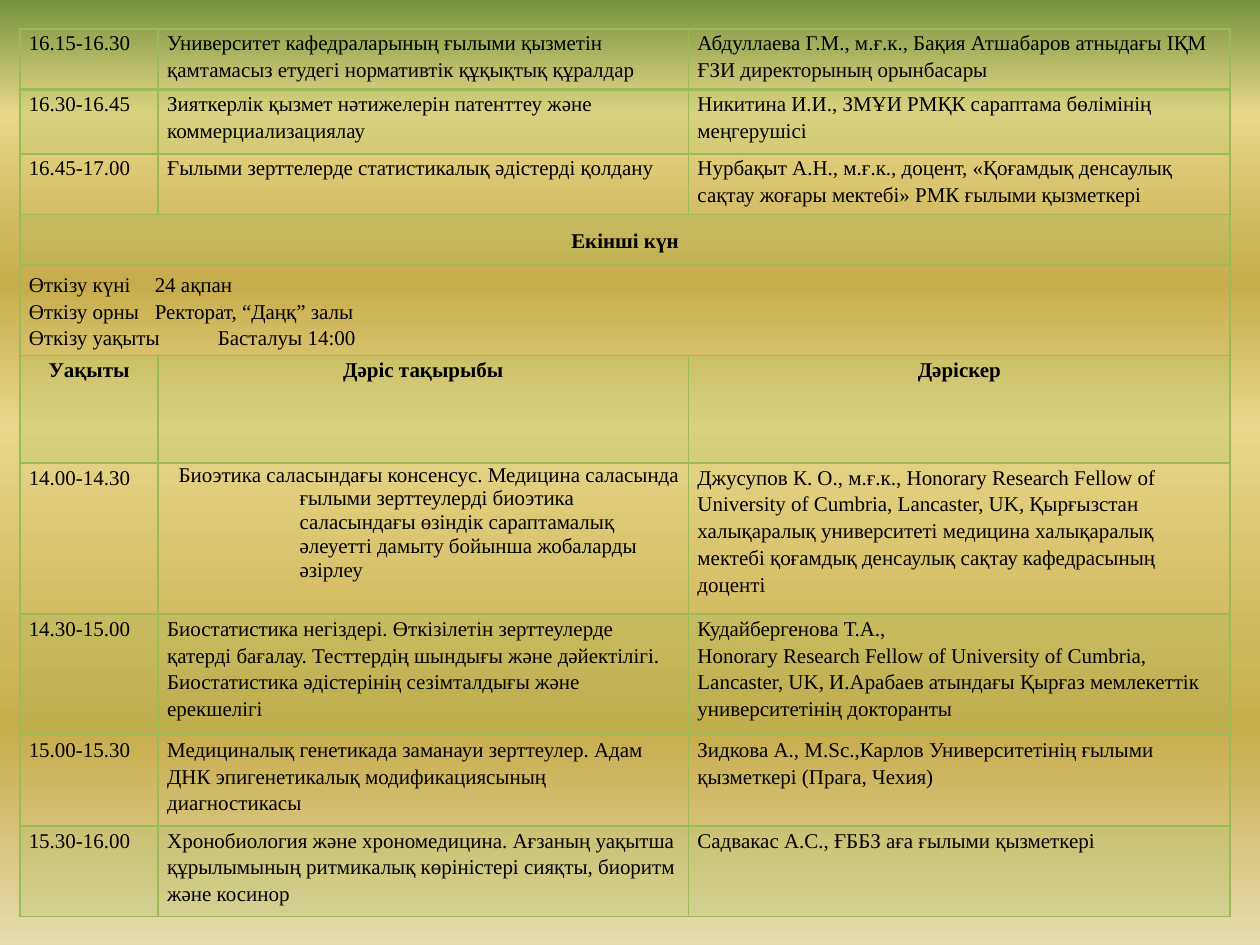
from lxml import etree
from pptx import Presentation
from pptx.dml.color import RGBColor
from pptx.enum import text
from pptx.oxml.ns import qn
from pptx.util import Cm, Pt

BLACK = RGBColor(0x00, 0x00, 0x00)
GREEN = RGBColor(0x9B, 0xBB, 0x59)
FONT = "Times New Roman"
BACKGROUND = [
    (0, RGBColor(0x77, 0x93, 0x3C)),
    (12, RGBColor(0xE6, 0xD7, 0x8A)),
    (30, RGBColor(0xC7, 0xAC, 0x4C)),
    (45, RGBColor(0xE6, 0xD7, 0x8A)),
    (77, RGBColor(0xC7, 0xAC, 0x4C)),
    (100, RGBColor(0xE6, 0xDC, 0xAC)),
]

COLUMNS = [2.79, 10.69, 10.92]
HEADING = dict(bold=True, align=text.PP_ALIGN.CENTER)
HANGING = dict(left=2.67, first=-2.44, spacing=Pt(13.6), tabs=[0.23, 1.24])
MIDDLE = text.MSO_ANCHOR.MIDDLE

ROWS = [
    (1.22, {}, [
        "16.15-16.30",
        "Университет кафедраларының ғылыми қызметін қамтамасыз етудегі нормативтік құқықтық құралдар",
        "Абдуллаева Г.М., м.ғ.к., Бақия Атшабаров атныдағы ІҚМ ҒЗИ директорының орынбасары"]),
    (1.3, {}, [
        "16.30-16.45",
        "Зияткерлік қызмет нәтижелерін патенттеу және\nкоммерциализациялау",
        "Никитина И.И., ЗМҰИ РМҚК сараптама бөлімінің меңгерушісі"]),
    (1.22, {}, [
        "16.45-17.00",
        "Ғылыми зерттелерде статистикалық әдістерді қолдану",
        "Нурбақыт А.Н., м.ғ.к., доцент, «Қоғамдық денсаулық сақтау жоғары мектебі» РМК ғылыми қызметкері"]),
    (1.02, HEADING, ["Екінші күн"]),
    (1.83, dict(line_tabs=[21.6, 19.66, 20.07]), [
        "Өткізу күні\t24 ақпан\nӨткізу орны\tРекторат, “Даңқ” залы\nӨткізу уақыты\tБасталуы 14:00"]),
    (2.16, HEADING, ["Уақыты", "Дәріс тақырыбы", "Дәріскер"]),
    (3.05, {}, [
        "14.00-14.30",
        ("Биоэтика саласындағы консенсус. Медицина саласында ғылыми зерттеулерді биоэтика "
         "саласындағы өзіндік сараптамалық әлеуетті дамыту бойынша жобаларды әзірлеу", HANGING),
        "Джусупов К. О., м.ғ.к., Honorary Research Fellow of University of Cumbria, Lancaster, UK, "
        "Қырғызстан халықаралық университеті медицина халықаралық мектебі қоғамдық денсаулық "
        "сақтау кафедрасының доценті"]),
    (2.44, {}, [
        "14.30-15.00",
        "Биостатистика негіздері. Өткізілетін зерттеулерде қатерді бағалау. Тесттердің шындығы "
        "және дәйектілігі. Биостатистика әдістерінің сезімталдығы және ерекшелігі",
        "Кудайбергенова Т.А.,\nHonorary Research Fellow of University of Cumbria, Lancaster, UK, "
        "И.Арабаев атындағы Қырғаз мемлекеттік университетінің докторанты"]),
    (1.83, {}, [
        "15.00-15.30",
        "Медициналық генетикада заманауи зерттеулер. Адам ДНК эпигенетикалық модификациясының диагностикасы",
        "Зидкова А., M.Sc.,Карлов Университетінің ғылыми қызметкері (Прага, Чехия)"]),
    (1.83, {}, [
        "15.30-16.00",
        "Хронобиология және хрономедицина. Ағзаның уақытша құрылымының ритмикалық көріністері "
        "сияқты, биоритм және косинор",
        "Садвакас А.С., ҒББЗ аға ғылыми қызметкері"]),
]


def add(parent, tag, **attrs):
    return etree.SubElement(parent, qn(tag), {k: str(v) for k, v in attrs.items()})


def write(tf, content, bold=False, align=text.PP_ALIGN.LEFT, spacing=1.15,
          left=0, first=0, tabs=(), line_tabs=()):
    tf.word_wrap = True
    for i, line in enumerate(content.split("\n")):
        p = tf.paragraphs[0] if i == 0 else tf.add_paragraph()
        p.alignment = align
        p.line_spacing = spacing
        pPr = p._p.get_or_add_pPr()
        pPr.set("marL", str(Cm(left)))
        pPr.set("indent", str(Cm(first)))
        stops = [line_tabs[i]] if line_tabs else tabs
        if stops:
            tab_list = add(pPr, "a:tabLst")
            for stop in stops:
                add(tab_list, "a:tab", pos=Cm(stop), algn="l")
        r = p.add_run()
        r.text = line
        r.font.name = FONT
        r.font.size = Pt(12)
        r.font.bold = bold
        r.font.color.rgb = BLACK


def paint_background(s):
    s.background.fill.gradient()
    grad = s._element.find(".//" + qn("a:gradFill"))
    for child in list(grad):
        grad.remove(child)
    stops = add(grad, "a:gsLst")
    for position, color in BACKGROUND:
        add(add(stops, "a:gs", pos=position * 1000), "a:srgbClr", val=color)
    add(grad, "a:lin", ang=90 * 60000, scaled=0)


def style_cell(cell, shaded, bottom):
    cell.margin_left = cell.margin_right = Cm(0.18)
    cell.margin_top = cell.margin_bottom = 0
    tcPr = cell._tc.get_or_add_tcPr()
    for side, width in (("L", 1), ("R", 1), ("T", 1), ("B", bottom)):
        ln = add(tcPr, "a:ln" + side, w=Pt(width))
        add(add(ln, "a:solidFill"), "a:srgbClr", val=GREEN)
    if shaded:
        cell.fill.solid()
        cell.fill.fore_color.rgb = GREEN
        add(tcPr.find(qn("a:solidFill")).find(qn("a:srgbClr")), "a:alpha", val=20000)
    else:
        cell.fill.background()


def main():
    prs = Presentation()
    prs.slide_width, prs.slide_height = Cm(25.4), Cm(19.05)
    s = prs.slides.add_slide(prs.slide_layouts[6])
    paint_background(s)

    heights = [row[0] for row in ROWS]
    table = s.shapes.add_table(len(ROWS), len(COLUMNS), Cm(0.4), Cm(0.58),
                               Cm(sum(COLUMNS)), Cm(sum(heights))).table
    table.first_row = table.horz_banding = False
    for column, width in zip(table.columns, COLUMNS):
        column.width = Cm(width)

    for i, (height, row_format, contents) in enumerate(ROWS):
        table.rows[i].height = Cm(height)
        for j in range(len(COLUMNS)):
            style_cell(table.cell(i, j), i % 2 == 1, 2 if i == 0 else 1)
        if len(contents) == 1:
            table.cell(i, 0).merge(table.cell(i, len(COLUMNS) - 1))
            table.cell(i, 0).vertical_anchor = MIDDLE
        for j, content in enumerate(contents):
            words, extra = content if isinstance(content, tuple) else (content, {})
            write(table.cell(i, j).text_frame, words, **row_format, **extra)

    prs.save("out.pptx")


if __name__ == "__main__":
    main()
